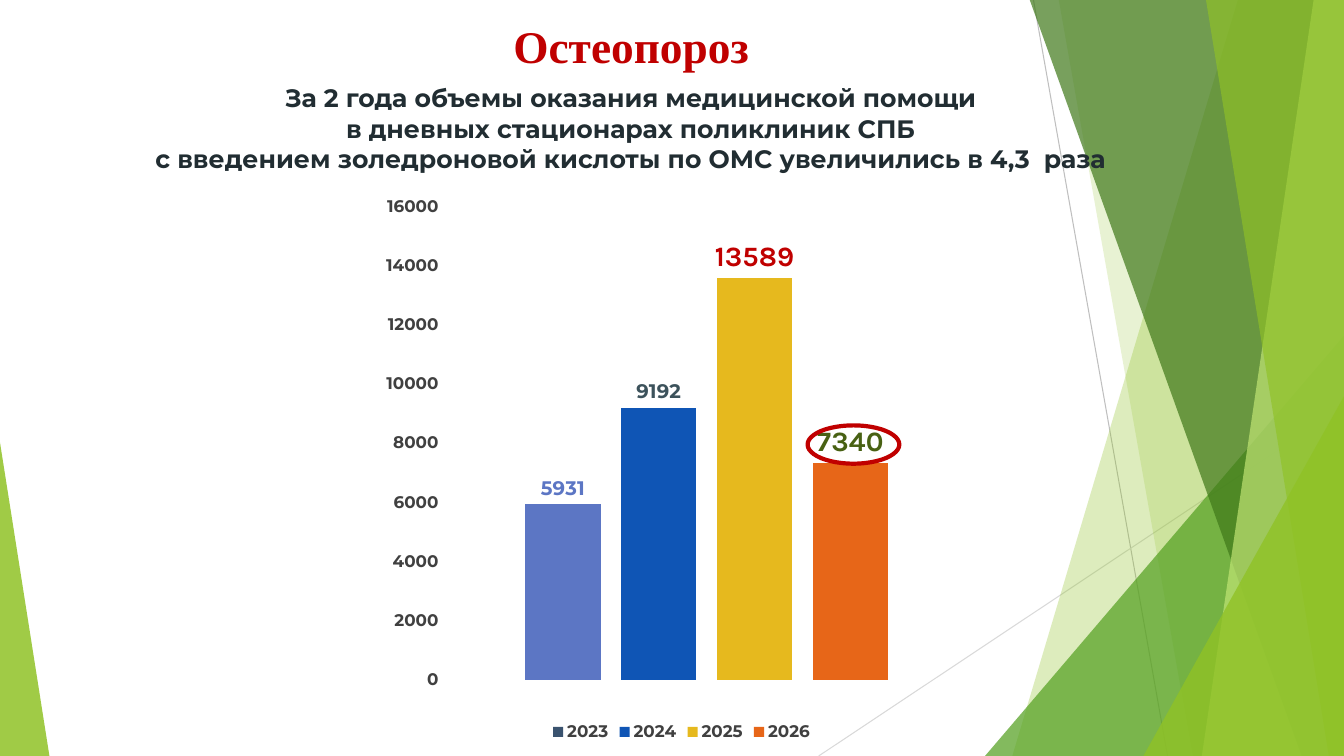
from dataclasses import dataclass
from typing import Optional

from lxml import etree
from pptx import Presentation
from pptx import util as u
from pptx.chart.data import CategoryChartData
from pptx.dml.color import RGBColor
from pptx.enum import chart as ch, shapes as sh, text as tx
from pptx.oxml import parse_xml
from pptx.oxml.ns import nsdecls, qn

PX = 9144  # one px is a hundredth of an inch
WIDE, HIGH = 1333, 750


@dataclass(frozen=True)
class Theme:
    lime: str = "90C226"
    grass: str = "54A021"
    moss: str = "3F7819"
    pale: str = "C0E474"
    red: str = "C00000"
    ink: str = "212D32"
    grey: str = "404040"
    black: str = "000000"
    sans: str = "Montserrat"
    serif: str = "Times New Roman"
    plain: str = "Karla"
    head: float = 32.4
    lead: int = 18
    big: int = 20
    label: int = 14
    axis: int = 12
    base: int = 10


T = Theme()


@dataclass(frozen=True)
class Ray:
    start: tuple[int, int]
    end: tuple[int, int]
    color: str


@dataclass(frozen=True)
class Band:
    """Four-sided strip that runs down to the right edge."""
    top: int
    foot: int
    color: str
    alpha: int


@dataclass(frozen=True)
class Wedge:
    left: int
    top: int
    width: int
    peak: int
    color: str
    alpha: int


@dataclass(frozen=True)
class Bar:
    year: str
    value: int
    color: str
    ink: str
    point: Optional[str] = None
    big: bool = False


RAYS = [Ray((1025, 0), (1158, HIGH), "BFBFBF"),
        Ray((WIDE, 403), (812, HIGH), "D9D9D9")]
DECOR = [
    Band(1228, 1004, T.lime, 30),
    Band(1050, 1183, T.lime, 20),
    Wedge(977, 333, 356, 1, T.grass, 72),
    Band(1021, 1291, T.moss, 70),
    Band(1303, 1192, T.pale, 70),
    Band(1196, 1318, T.lime, 65),
    Wedge(1134, 393, 199, 1, T.lime, 80),
    Wedge(0, 439, 49, 0, T.lime, 85),
]
BARS = [
    Bar("2023", 5931, "3A536F", "5C76C4", point="5C76C4"),
    Bar("2024", 9192, "0F55B5", "3C525B"),
    Bar("2025", 13589, "E6B91E", T.red, big=True),
    Bar("2026", 7340, "E76618", "486113", big=True),
]
LEAD = [
    "За 2 года объемы оказания медицинской помощи",
    "в дневных стационарах поликлиник СПБ",
    "с введением золедроновой кислоты по ОМС увеличились в 4,3  раза",
]


def px(*vals: int) -> list[u.Emu]:
    return [u.Emu(v * PX) for v in vals]


def rgb(code: str) -> RGBColor:
    return RGBColor.from_string(code)


def style(font, face: str, size: float, color: str, bold: bool = True) -> None:
    font.name, font.size, font.bold = face, u.Pt(size), bold
    font.color.rgb = rgb(color)


def write(para, words: str, face: str, size: float, color: str) -> None:
    run = para.add_run()
    run.text = words
    style(run.font, face, size, color)


def paint(shape, color: str, alpha: int) -> None:
    shape.shadow.inherit = False
    shape.line.fill.background()
    shape.fill.solid()
    shape.fill.fore_color.rgb = rgb(color)
    tint = shape._element.spPr.find(qn("a:solidFill"))[0]
    etree.SubElement(tint, qn("a:alpha")).set("val", str(alpha * 1000))


def draw_ray(slide, ray: Ray) -> None:
    line = slide.shapes.add_connector(
        sh.MSO_CONNECTOR.STRAIGHT, *px(*ray.start, *ray.end))
    line.line.color.rgb = rgb(ray.color)
    line.line.width = u.Pt(0.75)
    etree.SubElement(line._element.spPr, qn("a:effectLst"))


def draw_band(slide, band: Band) -> None:
    path = slide.shapes.build_freeform(band.top, -1, scale=PX)
    path.add_line_segments([(WIDE, -1), (WIDE, HIGH), (band.foot, HIGH)])
    paint(path.convert_to_shape(), band.color, band.alpha)


def draw_wedge(slide, item: Wedge) -> None:
    shape = slide.shapes.add_shape(
        sh.MSO_SHAPE.ISOSCELES_TRIANGLE,
        *px(item.left, item.top, item.width, HIGH - item.top))
    shape.adjustments[0] = item.peak
    paint(shape, item.color, item.alpha)


def draw_title(slide) -> None:
    title = slide.shapes.title
    slide.shapes._spTree.append(title._element)  # above the decor
    title.left, title.top, title.width, title.height = px(156, 8, 940, 53)
    frame = title.text_frame
    frame.auto_size = tx.MSO_AUTO_SIZE.NONE
    frame.vertical_anchor = tx.MSO_ANCHOR.TOP
    frame.margin_top, frame.margin_bottom = px(10, 0)
    para = frame.paragraphs[0]
    para.alignment = tx.PP_ALIGN.CENTER
    write(para, "Остеопороз", T.serif, T.head, T.red)


def draw_lead(slide) -> None:
    frame = slide.shapes.add_textbox(*px(115, 77, 1021, 101)).text_frame
    frame.word_wrap = False
    frame.auto_size = tx.MSO_AUTO_SIZE.SHAPE_TO_FIT_TEXT
    for i, words in enumerate(LEAD):
        para = frame.add_paragraph() if i else frame.paragraphs[0]
        para.alignment = tx.PP_ALIGN.CENTER
        write(para, words, T.sans, T.lead, T.ink)


def dress_bar(series, bar: Bar) -> None:
    series.format.fill.solid()
    series.format.fill.fore_color.rgb = rgb(bar.color)
    if bar.point:
        fill = series.points[0].format.fill
        fill.solid()
        fill.fore_color.rgb = rgb(bar.point)
    labels = series.data_labels
    labels.show_value = True
    labels.position = ch.XL_LABEL_POSITION.OUTSIDE_END
    if bar.big:
        style(labels.font, T.plain, T.axis, T.grey, False)
        label = series.points[0].data_label
        write(label.text_frame.paragraphs[0], str(bar.value),
              T.plain, T.big, bar.ink)
        label.position = ch.XL_LABEL_POSITION.OUTSIDE_END
    else:
        style(labels.font, T.sans, T.label, bar.ink)


def draw_chart(slide) -> None:
    data = CategoryChartData()
    data.categories = ["1"]
    for bar in BARS:
        data.add_series(bar.year, [bar.value])
    chart = slide.shapes.add_chart(
        ch.XL_CHART_TYPE.COLUMN_CLUSTERED, *px(364, 194, 624, 546), data).chart
    chart.has_title = False
    style(chart.font, T.plain, T.base, T.black, False)

    # Axes and legend
    chart.category_axis.visible = False
    axis = chart.value_axis
    axis.minimum_scale, axis.maximum_scale, axis.major_unit = 0, 16000, 2000
    axis.has_major_gridlines = False
    axis.major_tick_mark = ch.XL_TICK_MARK.NONE
    axis.format.line.fill.background()
    style(axis.tick_labels.font, T.sans, T.axis, T.grey)
    chart.has_legend = True
    chart.legend.position = ch.XL_LEGEND_POSITION.BOTTOM
    chart.legend.include_in_layout = False
    style(chart.legend.font, T.sans, T.axis, T.grey)

    # Bars
    plot = chart.plots[0]
    plot.vary_by_categories = False
    plot.gap_width, plot.overlap = 219, -27
    for series, bar in zip(plot.series, BARS):
        dress_bar(series, bar)

    # Plot area
    area = chart._chartSpace.chart.plotArea
    for old in area.findall(qn("c:layout")):
        area.remove(old)
    sides = {"x": 0.12, "y": 0.02, "w": 0.84, "h": 0.86}
    marks = "".join(f'<c:{k}Mode val="edge"/>' for k in "xy")
    marks += "".join(f'<c:{k} val="{v}"/>' for k, v in sides.items())
    area.insert(0, parse_xml(
        f'<c:layout {nsdecls("c")}><c:manualLayout>'
        f'<c:layoutTarget val="inner"/>{marks}</c:manualLayout></c:layout>'))


def draw_ring(slide) -> None:
    ring = slide.shapes.add_shape(sh.MSO_SHAPE.OVAL, *px(801, 422, 91, 38))
    ring.shadow.inherit = False
    ring.fill.background()
    ring.line.color.rgb = rgb(T.red)
    ring.line.width = u.Pt(3)


def main() -> None:
    deck = Presentation()
    deck.slide_width, deck.slide_height = px(WIDE, HIGH)
    slide = deck.slides.add_slide(deck.slide_layouts[5])
    for ray in RAYS:
        draw_ray(slide, ray)
    for item in DECOR:
        if isinstance(item, Band):
            draw_band(slide, item)
        else:
            draw_wedge(slide, item)
    draw_title(slide)
    draw_chart(slide)
    draw_lead(slide)
    draw_ring(slide)
    deck.save("out.pptx")


if __name__ == "__main__":
    main()
